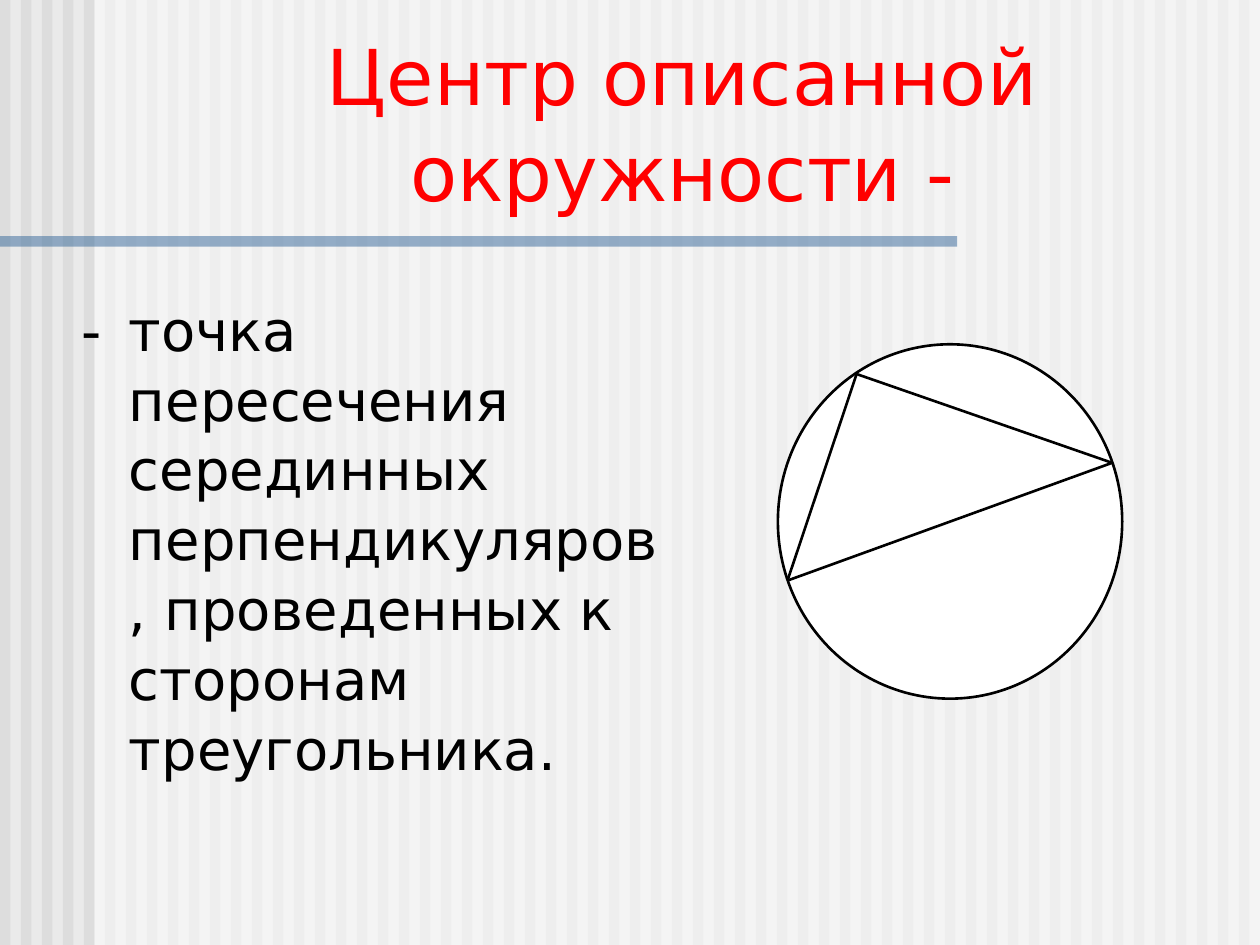
"""Builds a slide that defines the centre of a circumscribed circle."""
from itertools import combinations

from lxml.etree import SubElement
from pptx import Presentation
from pptx.dml.color import RGBColor
from pptx.enum.shapes import MSO_CONNECTOR, MSO_SHAPE
from pptx.enum.text import MSO_ANCHOR, MSO_AUTO_SIZE, PP_ALIGN
from pptx.oxml.ns import qn
from pptx.util import Pt


def color(hex_string):
    return RGBColor.from_string(hex_string)


class SlideBuilder:
    font_name = "DejaVu Sans"
    line_spacing = 1.04
    ink = "000000"
    line_width = 1.5

    def __init__(self, slide, background):
        self.slide = slide
        slide.background.fill.solid()
        slide.background.fill.fore_color.rgb = color(background)

    def group(self):
        return self.slide.shapes.add_group_shape()

    def shape(self, group, kind, box, fill, opacity=100, outlined=False):
        shape = group.shapes.add_shape(kind, *map(Pt, box))
        shape.shadow.inherit = False
        shape.fill.solid()
        shape.fill.fore_color.rgb = color(fill)
        if opacity < 100:
            fill_color = shape.element.spPr.find(qn("a:solidFill"))[0]
            SubElement(fill_color, qn("a:alpha"), val=str(opacity * 1000))
        if outlined:
            self.outline(shape)
        else:
            shape.line.fill.background()

    def segment(self, group, start, end):
        connector = group.shapes.add_connector(
            MSO_CONNECTOR.STRAIGHT, *map(Pt, (*start, *end))
        )
        self.outline(connector)
        SubElement(connector.element.spPr, qn("a:effectLst"))

    def outline(self, shape):
        shape.line.color.rgb = color(self.ink)
        shape.line.width = Pt(self.line_width)

    def placeholder(self, index, box, text, size, text_color, anchor, alignment):
        shape = self.slide.placeholders[index]
        shape.left, shape.top, shape.width, shape.height = map(Pt, box)
        shape.element.getparent().append(shape.element)
        frame = shape.text_frame
        frame.text = text
        frame.word_wrap = True
        frame.auto_size = MSO_AUTO_SIZE.NONE
        frame.vertical_anchor = anchor
        paragraph = frame.paragraphs[0]
        paragraph.alignment = alignment
        paragraph.line_spacing = self.line_spacing
        paragraph.font.name = self.font_name
        paragraph.font.size = Pt(size)
        paragraph.font.color.rgb = color(text_color)
        return paragraph

    def hanging_indent(self, paragraph, indent):
        properties = paragraph._p.get_or_add_pPr()
        properties.set("marL", str(Pt(indent)))
        properties.set("indent", str(Pt(-indent)))
        bullet = properties.makeelement(qn("a:buNone"), {})
        properties.find(qn("a:defRPr")).addprevious(bullet)


def main():
    presentation = Presentation()
    presentation.slide_width, presentation.slide_height = Pt(720), Pt(540)
    slide = presentation.slides.add_slide(presentation.slide_layouts[1])
    builder = SlideBuilder(slide, "EAEAEA")

    backdrop = builder.group()
    for left in range(0, 720, 12):
        builder.shape(backdrop, MSO_SHAPE.RECTANGLE, (left, 0, 6, 540), "DDDDDD")
    builder.shape(backdrop, MSO_SHAPE.RECTANGLE, (54, 0, 666, 540), "FFFFFF", opacity=50)
    builder.shape(backdrop, MSO_SHAPE.RECTANGLE, (0, 135, 547, 6), "336699", opacity=50)

    builder.placeholder(
        0, (68.5, 13.5, 643, 114), "Центр описанной окружности -",
        44, "FF0000", MSO_ANCHOR.BOTTOM, PP_ALIGN.CENTER,
    )
    definition = builder.placeholder(
        1, (39.5, 163.5, 348.5, 283),
        "-\tточка пересечения серединных перпендикуляров, "
        "проведенных к сторонам треугольника.",
        32, builder.ink, MSO_ANCHOR.TOP, PP_ALIGN.LEFT,
    )
    builder.hanging_indent(definition, 27)

    drawing = builder.group()
    builder.shape(
        drawing, MSO_SHAPE.OVAL, (444.5, 196.75, 196.75, 202.5), "FFFFFF", outlined=True
    )
    vertices = [(489.5, 213.75), (635.5, 264.5), (450, 331.75)]
    for start, end in combinations(vertices, 2):
        builder.segment(drawing, start, end)

    presentation.save("out.pptx")


if __name__ == "__main__":
    main()
